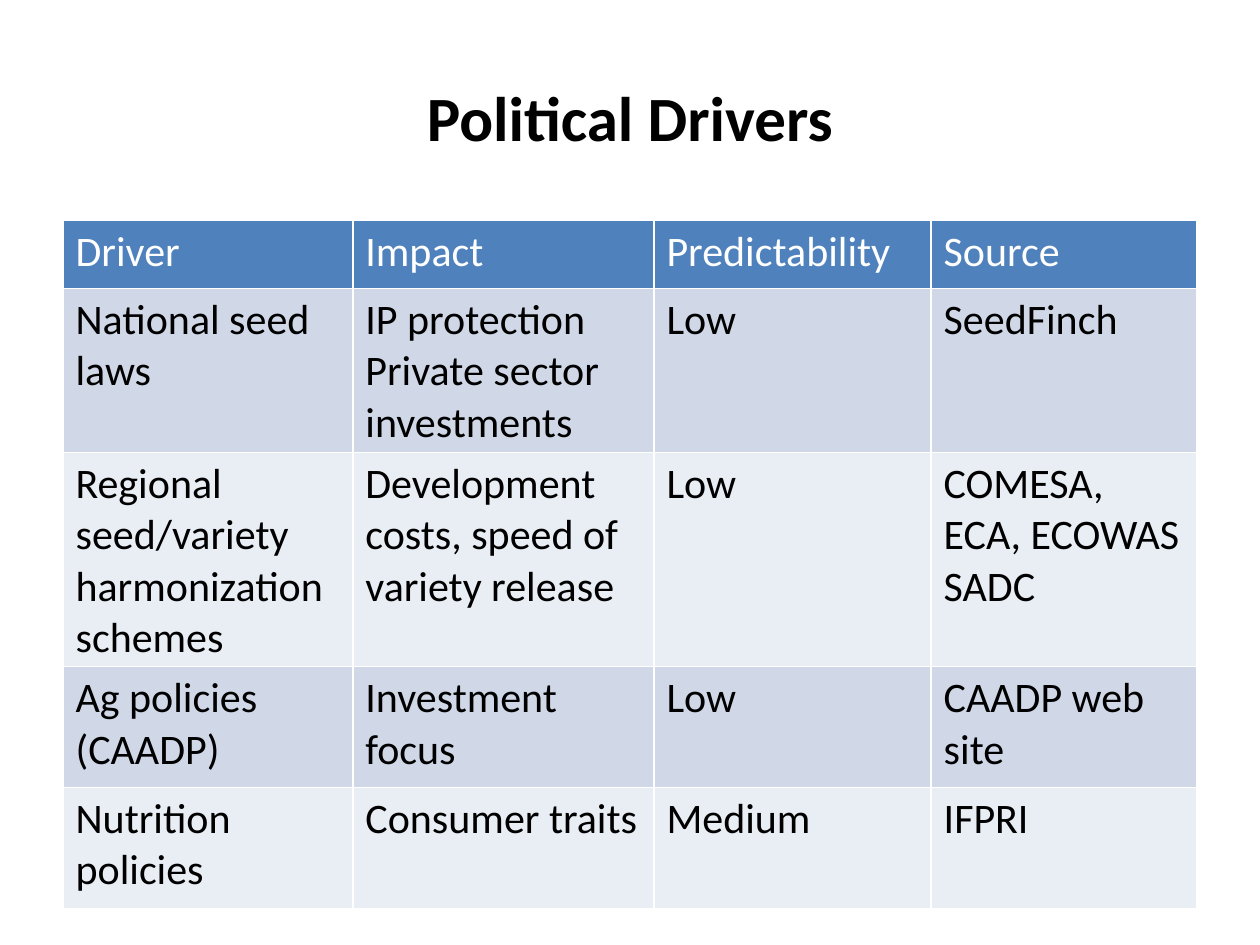
"""Build the Political Drivers slide with its table of drivers, impacts and sources."""
from pptx import Presentation
from pptx.dml.color import RGBColor
from pptx.enum.text import MSO_ANCHOR, PP_ALIGN
from pptx.util import Pt

CENTER = PP_ALIGN.CENTER
LEFT = PP_ALIGN.LEFT
MIDDLE = MSO_ANCHOR.MIDDLE

TITLE = "Political Drivers"
ROWS = [
    ("Driver", "Impact", "Predictability", "Source"),
    ("National seed laws", "IP protection\nPrivate sector investments", "Low", "SeedFinch"),
    ("Regional seed/variety harmonization schemes",
     "Development costs, speed of variety release", "Low", "COMESA, ECA, ECOWAS\nSADC"),
    ("Ag policies (CAADP)", "Investment focus", "Low", "CAADP web site"),
    ("Nutrition policies", "Consumer traits", "Medium", "IFPRI"),
]
COLUMN_WIDTHS = [165.6, 172.08, 158.4, 151.92]
ROW_HEIGHTS = [38.88, 88.56, 100.08, 69.12, 69.12]
HEADER_FILL = "4F81BD"
BAND_FILLS = ["D0D8E8", "E9EDF4"]
MARGIN, TITLE_TOP, TABLE_TOP = 36, 21.6, 126
CONTENT_WIDTH, TITLE_HEIGHT = 648, 90


def color(value):
    return RGBColor.from_string(value)


def write_text(text_frame, text, size=24, font_color="000000", bold=False, align=LEFT):
    text_frame.word_wrap = True
    text_frame.text = text
    for paragraph in text_frame.paragraphs:
        paragraph.alignment = align
        for run in paragraph.runs:
            run.font.name = "Calibri"
            run.font.size = Pt(size)
            run.font.bold = bold
            run.font.color.rgb = color(font_color)


def add_title(slide):
    shape = slide.shapes.add_textbox(
        Pt(MARGIN), Pt(TITLE_TOP), Pt(CONTENT_WIDTH), Pt(TITLE_HEIGHT))
    shape.fill.solid()
    shape.fill.fore_color.rgb = color("FFFFFF")
    write_text(shape.text_frame, TITLE, size=36, bold=True, align=CENTER)
    shape.text_frame.vertical_anchor = MIDDLE


def add_drivers_table(slide):
    table = slide.shapes.add_table(
        len(ROWS), len(COLUMN_WIDTHS), Pt(MARGIN), Pt(TABLE_TOP),
        Pt(CONTENT_WIDTH), Pt(sum(ROW_HEIGHTS))).table
    for column, width in zip(table.columns, COLUMN_WIDTHS):
        column.width = Pt(width)
    for index, (row, height, texts) in enumerate(zip(table.rows, ROW_HEIGHTS, ROWS)):
        row.height = Pt(height)
        is_header = index == 0
        fill = HEADER_FILL if is_header else BAND_FILLS[(index - 1) % 2]
        for cell, text in zip(row.cells, texts):
            cell.fill.solid()
            cell.fill.fore_color.rgb = color(fill)
            write_text(cell.text_frame, text, font_color="FFFFFF" if is_header else "000000")


def main():
    presentation = Presentation()
    presentation.slide_width, presentation.slide_height = Pt(720), Pt(540)
    slide = presentation.slides.add_slide(presentation.slide_layouts[6])
    add_title(slide)
    add_drivers_table(slide)
    presentation.save("out.pptx")


if __name__ == "__main__":
    main()
